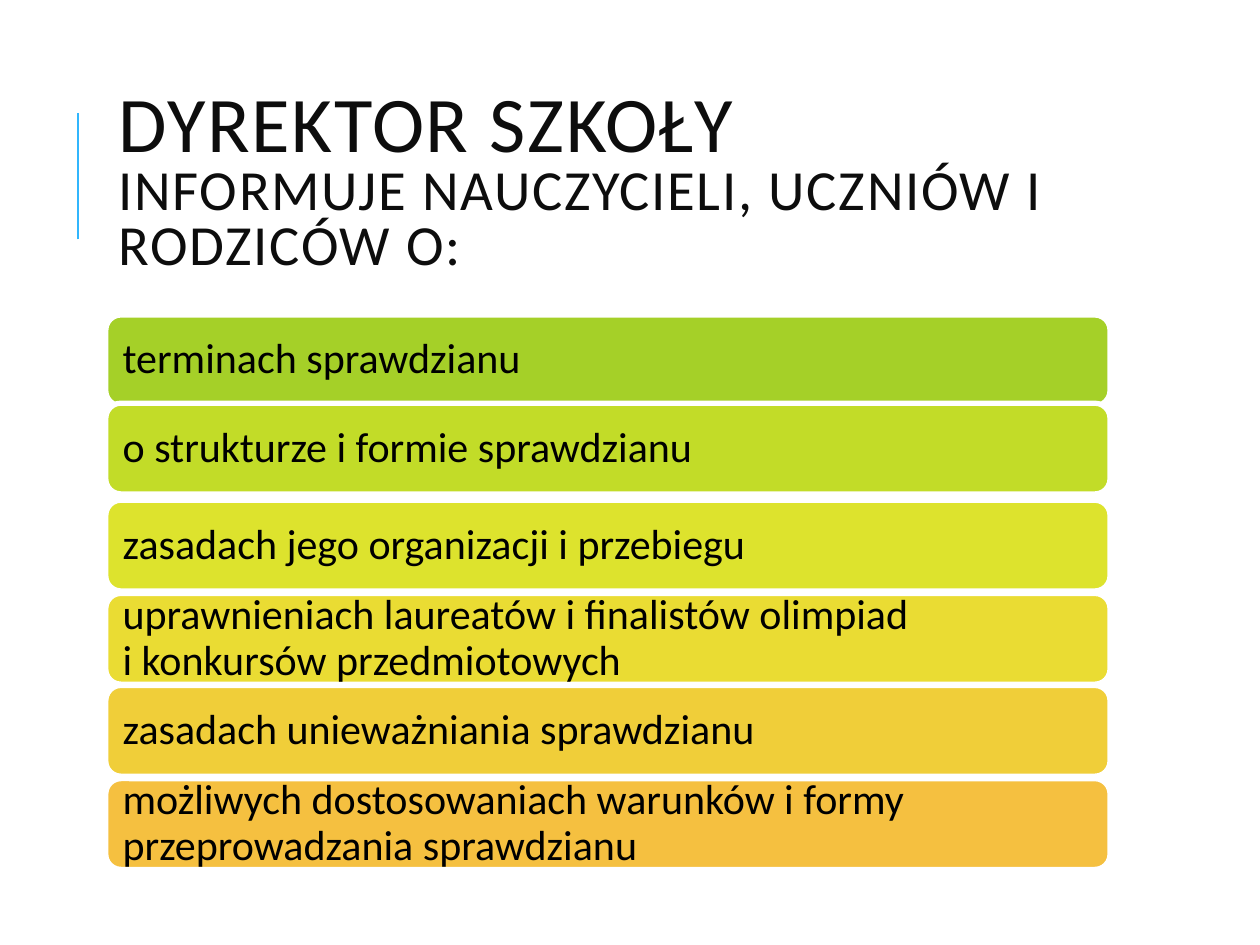
from pptx import Presentation
from pptx.dml.color import RGBColor
from pptx.enum.shapes import MSO_CONNECTOR, MSO_SHAPE
from pptx.enum.text import MSO_ANCHOR, MSO_AUTO_SIZE, PP_ALIGN
from pptx.oxml.ns import qn
from pptx.util import Inches, Pt
from lxml.etree import SubElement

COLORS = {
    "title": "0D0D0D", "text": "000000", "accent": "31B6FD", "border": "FFFFFF",
    "lime": "A5D028", "green": "C2DC28", "lemon": "DDE32D",
    "yellow": "EADC33", "gold": "F0CE39", "orange": "F5C040",
}
LEFT, WIDTH, BAR_HEIGHT = 0.84, 7.97, 0.72
TITLE_LINES = [("DYREKTOR SZKOŁY ", 45), ("INFORMUJE NAUCZYCIELI, UCZNIÓW I RODZICÓW O:", 32.4)]
BARS = [
    (2.5, "lime", "terminach sprawdzianu"),
    (3.2, "green", "o strukturze i formie sprawdzianu"),
    (3.97, "lemon", "zasadach jego organizacji i przebiegu"),
    (4.71, "yellow", "uprawnieniach laureatów i finalistów olimpiad \vi konkursów przedmiotowych"),
    (5.44, "gold", "zasadach unieważniania sprawdzianu"),
    (6.18, "orange", "możliwych dostosowaniach warunków i formy przeprowadzania sprawdzianu"),
]


class SlideBuilder:
    """Holds the shared style and the slide being built."""

    font_name = "Calibri"
    frame_format = {
        "word_wrap": True, "auto_size": MSO_AUTO_SIZE.NONE,
        "vertical_anchor": MSO_ANCHOR.MIDDLE,
        "margin_left": Inches(0.1), "margin_right": Inches(0.1),
    }

    def __init__(self, slide):
        self.slide = slide

    def color(self, name):
        return RGBColor.from_string(COLORS[name])

    def format_frame(self, frame, margin, line_spacing):
        margins = {"margin_top": Inches(margin), "margin_bottom": Inches(margin)}
        for name, value in {**self.frame_format, **margins}.items():
            setattr(frame, name, value)
        paragraph = frame.paragraphs[0]
        paragraph.alignment = PP_ALIGN.LEFT
        paragraph.line_spacing = line_spacing
        return paragraph

    def format_font(self, font, size, color):
        for name, value in {"name": self.font_name, "size": Pt(size)}.items():
            setattr(font, name, value)
        font.color.rgb = self.color(color)

    def title(self, lines, top, height):
        title = self.slide.shapes.title
        position = {"left": LEFT, "top": top, "width": WIDTH, "height": height}
        for name, value in position.items():
            setattr(title, name, Inches(value))
        paragraph = self.format_frame(title.text_frame, 0.05, 0.8)
        for index, (text, size) in enumerate(lines):
            if index:
                paragraph.add_line_break()
            run = paragraph.add_run()
            run.text = text
            self.format_font(run.font, size, "title")
            run.font._element.set("spc", "100")

    def line(self, x, top, bottom):
        connector = self.slide.shapes.add_connector(
            MSO_CONNECTOR.STRAIGHT, Inches(x), Inches(top), Inches(x), Inches(bottom))
        connector.line.color.rgb = self.color("accent")
        connector.line.width = Pt(1.5)
        SubElement(connector._element.spPr, qn("a:effectLst"))

    def bar(self, top, color, text):
        shape = self.slide.shapes.add_shape(
            MSO_SHAPE.ROUNDED_RECTANGLE,
            Inches(LEFT), Inches(top), Inches(WIDTH), Inches(BAR_HEIGHT))
        shape.shadow.inherit = False
        shape.fill.solid()
        shape.fill.fore_color.rgb = self.color(color)
        shape.line.color.rgb = self.color("border")
        shape.line.width = Pt(3)
        paragraph = self.format_frame(shape.text_frame, 0.1, 0.9)
        paragraph.text = text
        for run in paragraph.runs:
            self.format_font(run.font, 24, "text")


def main():
    presentation = Presentation()
    presentation.slide_width, presentation.slide_height = Inches(10), Inches(7.5)
    builder = SlideBuilder(presentation.slides.add_slide(presentation.slide_layouts[5]))
    builder.line(0.62, 1.9, 0.9)
    builder.title(TITLE_LINES, 0.64, 1.64)
    for top, color, text in BARS:
        builder.bar(top, color, text)
    presentation.save("out.pptx")


if __name__ == "__main__":
    main()
